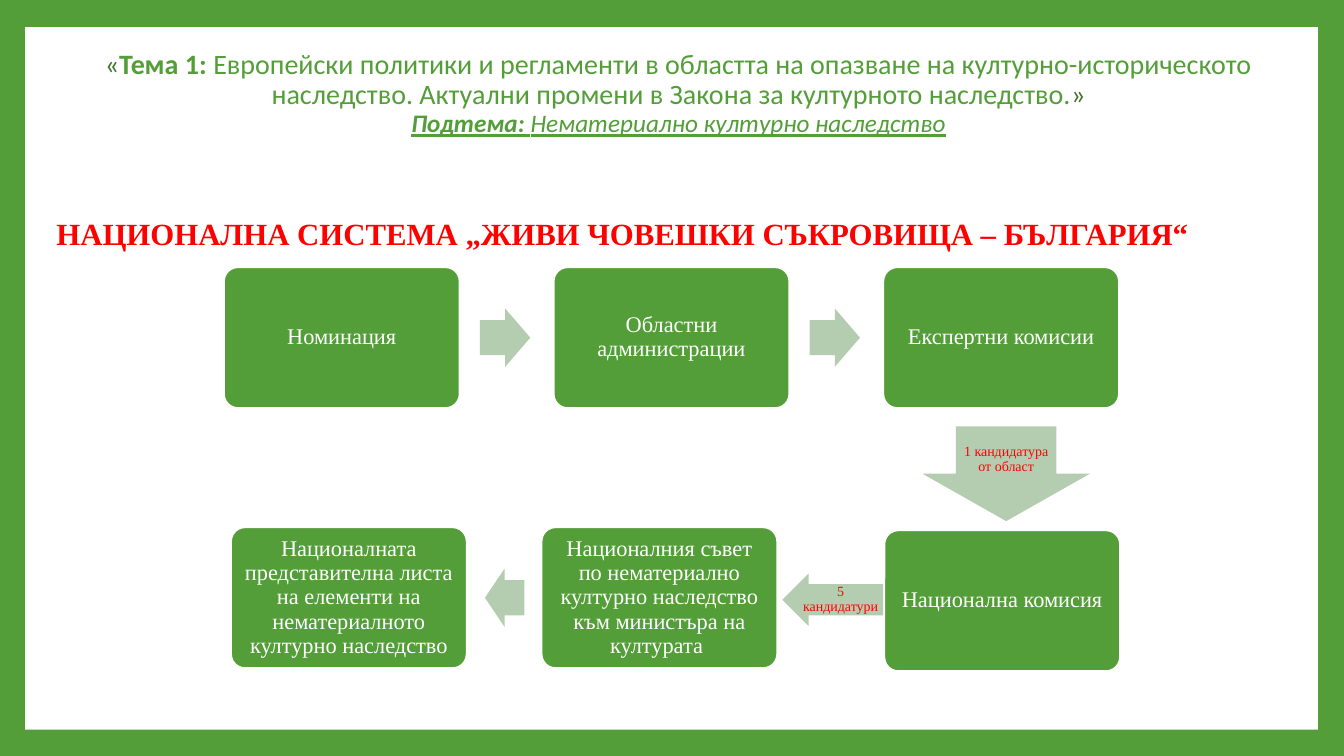
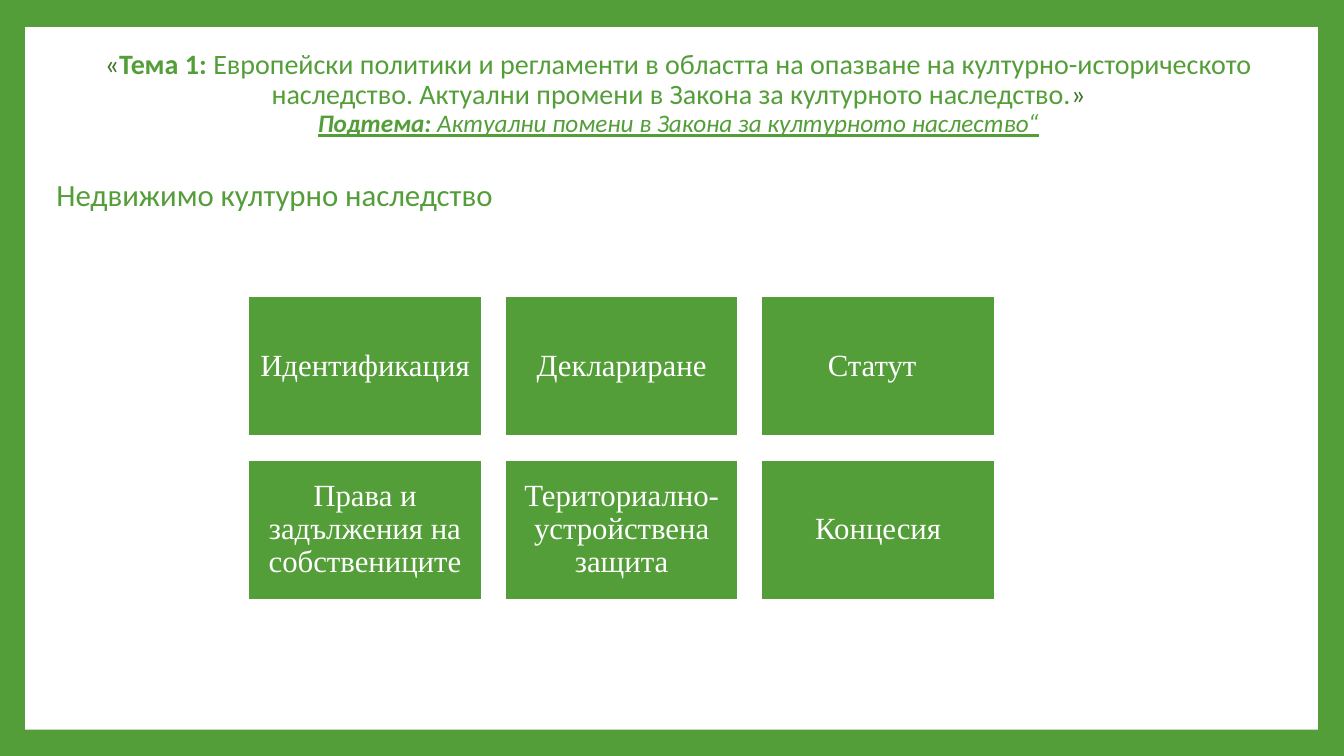
import pptx
import pptx.dml.color
import pptx.enum.shapes
import pptx.enum.text
import pptx.oxml.ns
import pptx.util
from lxml import etree

Inches = pptx.util.Inches
Pt = pptx.util.Pt
SHAPE = pptx.enum.shapes.MSO_SHAPE
ANCHOR = pptx.enum.text.MSO_ANCHOR
ALIGN = pptx.enum.text.PP_ALIGN

# Shared look
GREEN, DARK_GREEN, PALE_GREEN = "549E39", "3F762B", "B4CCAF"
WHITE, RED = "FFFFFF", "FF0000"
SERIF, SANS = "Times New Roman", "Calibri"
THEME = ("Европейски политики и регламенти в областта на опазване на "
         "културно-историческото наследство. Актуални промени в Закона "
         "за културното наследство.")


# Formatting helpers
def rgb(hex_colour):
    return pptx.dml.color.RGBColor.from_string(hex_colour)


def apply(target, values):
    for attribute, value in values.items():
        setattr(target, attribute, value)


def place(shape, left, top, width, height):
    apply(shape, {"left": Inches(left), "top": Inches(top),
                  "width": Inches(width), "height": Inches(height)})


def add_run(paragraph, text, size, font, colour, **extra):
    run = paragraph.add_run()
    run.text = text
    apply(run.font, {"size": Pt(size), "name": font, "bold": False, **extra})
    run.font.color.rgb = rgb(colour)


def format_frame(frame, anchor, align, margins=None):
    apply(frame, {"word_wrap": True, "vertical_anchor": anchor,
                  "auto_size": pptx.enum.text.MSO_AUTO_SIZE.NONE})
    if margins is not None:
        sides = ("margin_left", "margin_top", "margin_right", "margin_bottom")
        apply(frame, dict.fromkeys(sides, Inches(margins)))
    paragraph = frame.paragraphs[0]
    apply(paragraph, {"alignment": align, "line_spacing": 0.9})
    return paragraph


# Kinds of element
def add_figure(slide, kind, box, fill, text="", size=16, colour=WHITE,
               margins=0.0, adjustments=(), outlined=False):
    figure = slide.shapes.add_shape(kind, *map(Inches, box))
    figure.shadow.inherit = False
    figure.fill.solid()
    figure.fill.fore_color.rgb = rgb(fill)
    if outlined:
        figure.line.color.rgb = rgb(WHITE)
        figure.line.width = Pt(1.5)
    else:
        figure.line.fill.background()
    for index, value in enumerate(adjustments):
        figure.adjustments[index] = value
    if text:
        paragraph = format_frame(figure.text_frame, ANCHOR.MIDDLE,
                                 ALIGN.CENTER, margins)
        add_run(paragraph, text, size, SERIF, colour)
    return figure


def add_step(slide, left, top, text):
    add_figure(slide, SHAPE.ROUNDED_RECTANGLE, (left, top, 2.34, 1.4), GREEN,
               text, margins=0.07, adjustments=(0.1,), outlined=True)


def add_arrow(slide, kind, box, text=""):
    add_figure(slide, kind, box, PALE_GREEN, text, 10, RED,
               adjustments=(0.6, 0.5))


def add_title(slide, subtopic):
    title = slide.shapes.title
    place(title, 0.46, 0.45, 12.54, 1.1)
    paragraph = format_frame(title.text_frame, ANCHOR.TOP, ALIGN.CENTER)
    add_run(paragraph, "«", 20, SANS, DARK_GREEN)
    add_run(paragraph, "Тема 1: ", 20, SANS, GREEN, bold=True)
    add_run(paragraph, THEME, 20, SANS, GREEN)
    add_run(paragraph, "»", 20, SANS, DARK_GREEN)
    paragraph.add_line_break()
    emphasis = {"italic": True, "underline": True}
    add_run(paragraph, "Подтема: ", 18, SANS, GREEN, bold=True, **emphasis)
    add_run(paragraph, subtopic, 18, SANS, GREEN, **emphasis)


def add_heading(slide, top, text, font, colour, bold):
    body = slide.placeholders[1]
    place(body, 0.46, top, 12.54, 7.18 - top)
    paragraph = format_frame(body.text_frame, ANCHOR.TOP, ALIGN.LEFT)
    paragraph.space_before = Pt(0)
    properties = paragraph._p.get_or_add_pPr()
    properties.set("marL", "0")
    properties.set("indent", "0")
    etree.SubElement(properties, pptx.oxml.ns.qn("a:buNone"))
    add_run(paragraph, text, 22, font, colour, bold=bold)


# Master: green border around a white panel
def add_frame(master, slide):
    master.background.fill.solid()
    master.background.fill.fore_color.rgb = rgb(GREEN)
    panel = add_figure(slide, SHAPE.RECTANGLE, (0.25, 0.27, 12.82, 6.97), WHITE)
    master.shapes._spTree.insert(2, panel._element)


# Slide 1: path of a nomination
def fill_nomination(slide):
    add_title(slide, "Нематериално културно наследство")
    add_heading(slide, 2.12,
                "НАЦИОНАЛНА СИСТЕМА „ЖИВИ ЧОВЕШКИ СЪКРОВИЩА – БЪЛГАРИЯ“",
                SERIF, RED, True)
    first_steps = ("Номинация", "Областни администрации", "Експертни комисии")
    for column, text in enumerate(first_steps):
        left = 2.22 + 3.27 * column
        add_step(slide, left, 2.65, text)
        if column:
            add_arrow(slide, SHAPE.RIGHT_ARROW, (left - 0.73, 3.06, 0.5, 0.58))

    add_arrow(slide, SHAPE.DOWN_ARROW, (9.15, 4.23, 1.66, 0.94),
              "1 кандидатура от област")
    add_step(slide, 8.77, 5.26, "Национална комисия")
    add_arrow(slide, SHAPE.LEFT_ARROW, (7.76, 5.69, 1, 0.52), "5 кандидатури")
    add_step(slide, 5.37, 5.23, "Националния съвет по нематериално културно "
                                "наследство към министъра на културата ")
    add_arrow(slide, SHAPE.LEFT_ARROW, (4.81, 5.64, 0.39, 0.58))
    add_step(slide, 2.29, 5.23, "Националната представителна листа на елементи "
                                "на нематериалното културно наследство")


# Slide 2: grid of topics
def fill_immovable_heritage(slide):
    add_title(slide, "Актуални помени в Закона за културното наслество“")
    add_heading(slide, 1.73, "Недвижимо културно наследство",
                SANS, GREEN, False)
    topics = ("Идентификация", "Деклариране", "Статут\t",
              "Права и задължения на собствениците",
              "Териториално-устройствена защита", "Концесия")
    for index, topic in enumerate(topics):
        row, column = divmod(index, 3)
        box = (2.46 + 2.545 * column, 2.94 + 1.62 * row, 2.32, 1.39)
        add_figure(slide, SHAPE.RECTANGLE, box, GREEN, topic, 22,
                   margins=0.09, outlined=True)


def main():
    deck = pptx.Presentation()
    apply(deck, {"slide_width": Inches(13.33), "slide_height": Inches(7.5)})
    layout = deck.slide_layouts[1]
    nomination, heritage = (deck.slides.add_slide(layout) for _ in range(2))
    add_frame(deck.slide_master, nomination)
    fill_nomination(nomination)
    fill_immovable_heritage(heritage)
    deck.save("out.pptx")


if __name__ == "__main__":
    main()
